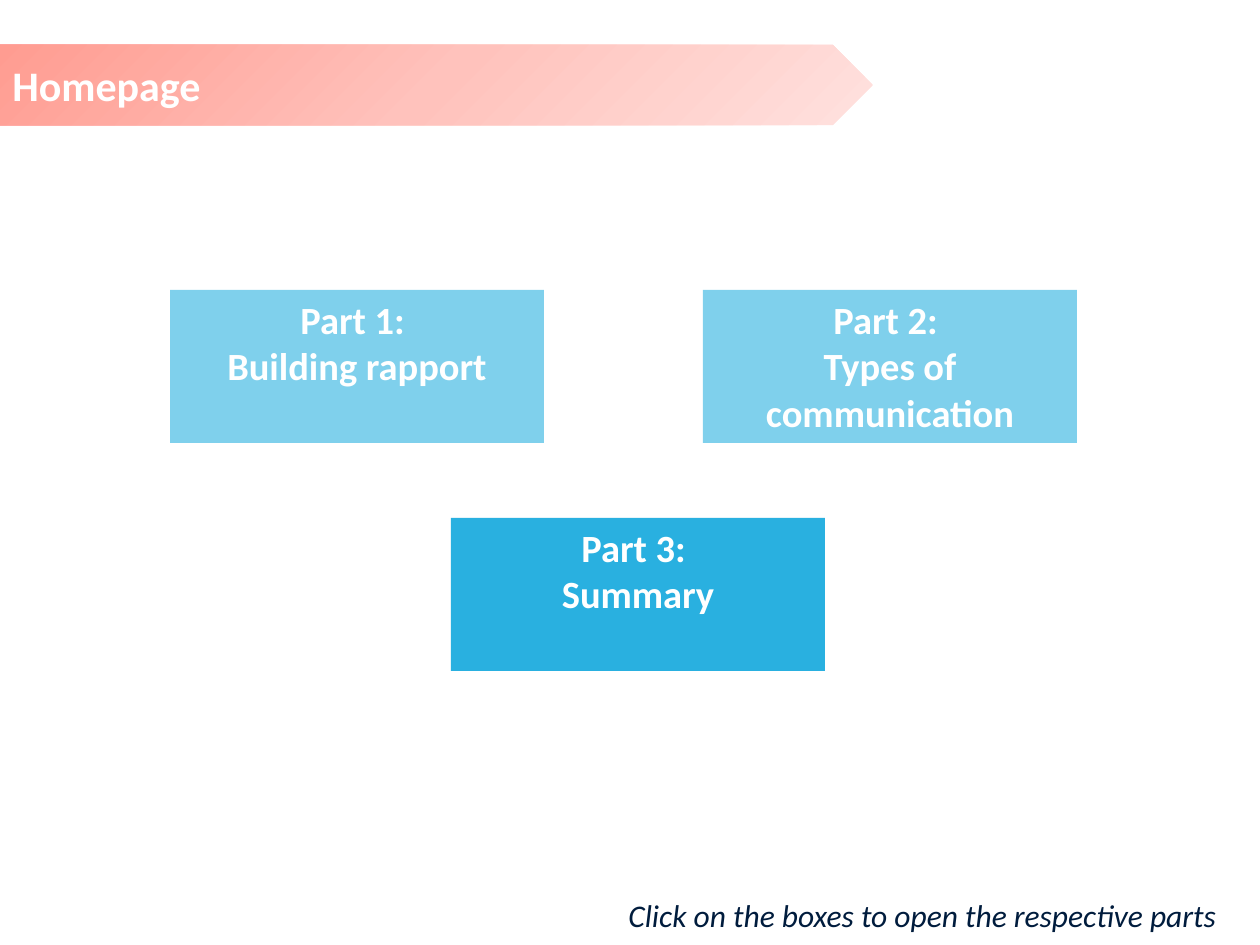
from lxml import etree
from pptx import Presentation
from pptx.dml.color import RGBColor
from pptx.enum.shapes import MSO_SHAPE as SHAPE
from pptx.enum.text import MSO_ANCHOR as ANCHOR, MSO_AUTO_SIZE as AUTO, PP_ALIGN as ALIGN
from pptx.oxml import parse_xml
from pptx.oxml.ns import nsdecls, qn
from pptx.util import Emu, Pt

PX = 914400 // 126
WHITE = RGBColor(0xFF, 0xFF, 0xFF)
BLUE = RGBColor(0x00, 0xA2, 0xDB)
NAVY = RGBColor(0x00, 0x1C, 0x3D)
CORAL = RGBColor(0xFF, 0x9C, 0x91)
PINK = RGBColor(0xFF, 0xC2, 0xBC)
BLUSH = RGBColor(0xFF, 0xE1, 0xDE)


def add_shape(kind, *box):
    sp = s.shapes.add_shape(kind, *[Emu(v * PX) for v in box])
    sp.shadow.inherit = False
    sp.line.fill.background()
    return sp


def add_run(p, text, size, color, bold=False, italic=False):
    r = p.add_run()
    r.text = text
    r.font.name = "Calibri"
    r.font.size = Pt(size)
    r.font.bold = bold
    r.font.italic = italic
    r.font.color.rgb = color


prs = Presentation()
prs.slide_width, prs.slide_height = Emu(1260 * PX), Emu(945 * PX)
s = prs.slides.add_slide(prs.slide_layouts[6])

# Title banner with a radial gradient from its top left corner
banner = add_shape(SHAPE.PENTAGON, 0, 45, 873, 80)
banner.fill.gradient()
stops = "".join(
    f'<a:gs pos="{pos * 1000}"><a:srgbClr val="{color}"/></a:gs>'
    for pos, color in ((0, CORAL), (50, PINK), (100, BLUSH))
)
grad = banner._element.spPr.find(qn("a:gradFill"))
grad.getparent().replace(grad, parse_xml(
    f'<a:gradFill {nsdecls("a")} rotWithShape="1"><a:gsLst>{stops}</a:gsLst>'
    '<a:path path="circle"><a:fillToRect r="100000" b="100000"/></a:path></a:gradFill>'
))
tf = banner.text_frame
tf.vertical_anchor = ANCHOR.MIDDLE
p = tf.paragraphs[0]
p.alignment = ALIGN.LEFT
add_run(p, "Homepage", 24, WHITE, bold=True)

# Part boxes: left, top, opacity in percent, lines
parts = [
    (170, 290, 50, ("Part 1: ", "Building rapport")),
    (703, 290, 50, ("Part 2: ", "Types of communication")),
    (451, 518, 84, ("Part 3: ", "Summary")),
]
for left, top, opacity, lines in parts:
    sp = add_shape(SHAPE.RECTANGLE, left, top, 374, 153)
    sp.fill.solid()
    sp.fill.fore_color.rgb = BLUE
    clr = sp._element.spPr.find(qn("a:solidFill")).find(qn("a:srgbClr"))
    etree.SubElement(clr, qn("a:alpha")).set("val", str(opacity * 1000))
    tf = sp.text_frame
    tf.word_wrap = True
    tf.vertical_anchor = ANCHOR.TOP
    for i, line in enumerate(lines):
        p = tf.add_paragraph() if i else tf.paragraphs[0]
        p.alignment = ALIGN.CENTER
        add_run(p, line, 22, WHITE, bold=True)

# Hint at the bottom right
hint = s.shapes.add_textbox(*[Emu(v * PX) for v in (616, 890, 620, 50)])
tf = hint.text_frame
tf.word_wrap = False
tf.auto_size = AUTO.SHAPE_TO_FIT_TEXT
add_run(tf.paragraphs[0], "Click on the boxes to open the respective parts", 18, NAVY, italic=True)

prs.save("out.pptx")
